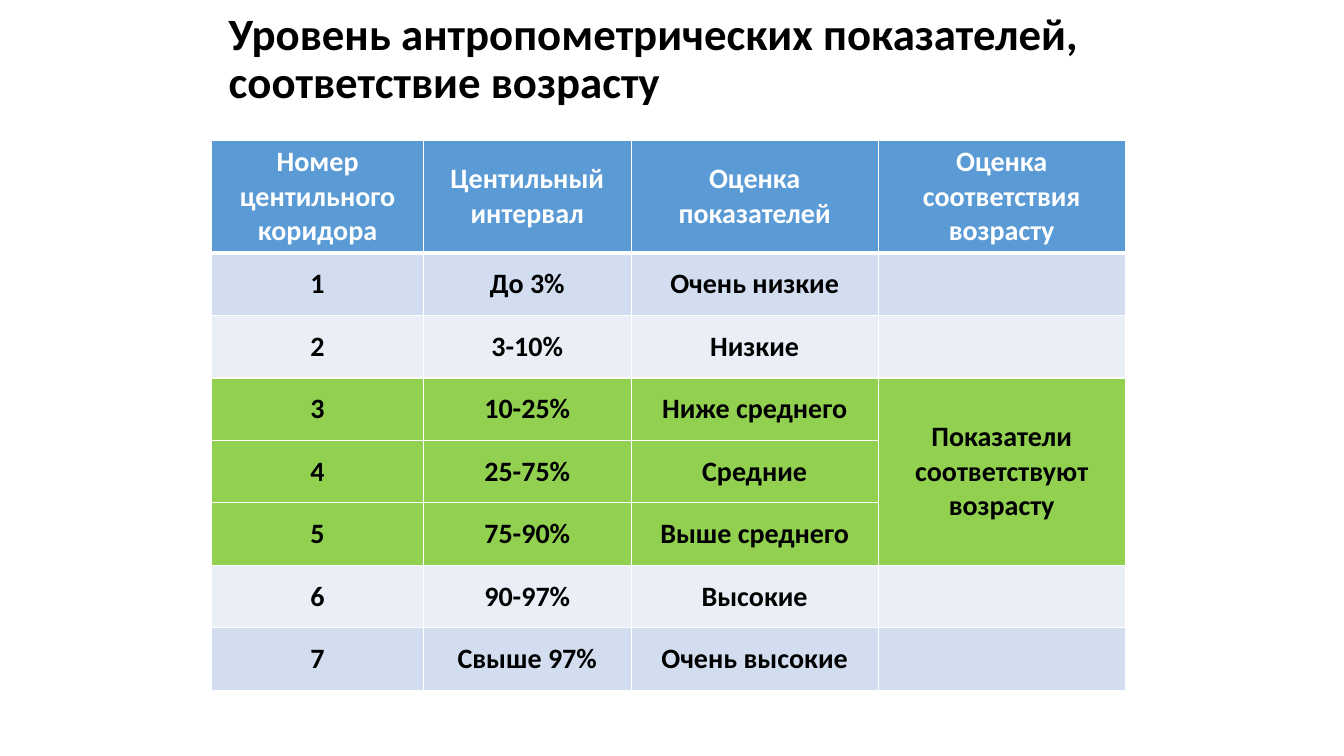
from lxml import etree
from pptx import Presentation
from pptx.dml.color import RGBColor
from pptx.enum import text as t
from pptx.oxml import ns
from pptx.util import Inches, Pt

BLUE, PALE, LIGHT, GREEN = "5B9BD5", "D2DEEF", "EAEFF7", "92D050"
FILLS = [BLUE, PALE, LIGHT, GREEN, GREEN, GREEN, LIGHT, PALE]
WIDTHS = [2.1, 2.06, 2.45, 2.45]
HEAD, ROW = 1.12, 0.62
ROWS = [
    ("Номер центильного коридора", "Центильный интервал",
     "Оценка показателей", "Оценка соответствия возрасту"),
    ("1", "До 3%", "Очень низкие", ""),
    ("2", "3-10%", "Низкие", ""),
    ("3", "10-25%", "Ниже среднего", "Показатели соответствуют возрасту"),
    ("4", "25-75%", "Средние", ""),
    ("5", "75-90%", "Выше среднего", ""),
    ("6", "90-97%", "Высокие", ""),
    ("7", "Свыше 97%", "Очень высокие", ""),
]


def color(code):
    return RGBColor.from_string(code)


def write(frame, words, size=20, ink="000000", align=t.PP_ALIGN.CENTER, space=1.0):
    frame.word_wrap = True
    para = frame.paragraphs[0]
    para.alignment = align
    para.line_spacing = space
    para.font.size = Pt(size)
    if words:
        run = para.add_run()
        run.text = words
        font = run.font
        font.name, font.size, font.bold = "Calibri", Pt(size), True
        font.color.rgb = color(ink)


def border(cell, low):
    props = cell._tc.get_or_add_tcPr()
    for place, (side, width) in enumerate(zip("LRTB", (1, 1, 1, low))):
        line = etree.Element(ns.qn(f"a:ln{side}"), w=str(Pt(width)))
        fill = etree.SubElement(line, ns.qn("a:solidFill"))
        etree.SubElement(fill, ns.qn("a:srgbClr"), val="FFFFFF")
        props.insert(place, line)


def title(slide, words):
    box = slide.shapes.add_textbox(Inches(2.17), Inches(-0.03), Inches(9), Inches(1.25))
    box.text_frame.vertical_anchor = t.MSO_ANCHOR.MIDDLE
    write(box.text_frame, words, size=32, align=t.PP_ALIGN.LEFT, space=0.9)


def grid(slide):
    high = HEAD + ROW * (len(ROWS) - 1)
    table = slide.shapes.add_table(
        len(ROWS), len(WIDTHS), Inches(2.1), Inches(1.39),
        Inches(sum(WIDTHS)), Inches(high)).table
    for col, width in zip(table.columns, WIDTHS):
        col.width = Inches(width)
    for r, (row, fill) in enumerate(zip(ROWS, FILLS)):
        table.rows[r].height = Inches(ROW if r else HEAD)
        for c, words in enumerate(row):
            cell = table.cell(r, c)
            cell.vertical_anchor = t.MSO_ANCHOR.MIDDLE
            cell.fill.solid()
            cell.fill.fore_color.rgb = color(fill)
            border(cell, 1 if r else 3)
            write(cell.text_frame, words, ink="000000" if r else "FFFFFF")
    table.cell(3, 3).merge(table.cell(5, 3))


def main():
    deck = Presentation()
    deck.slide_width, deck.slide_height = Inches(13.33), Inches(7.5)
    slide = deck.slides.add_slide(deck.slide_layouts[6])
    title(slide, "Уровень антропометрических показателей, соответствие возрасту")
    grid(slide)
    deck.save("out.pptx")


if __name__ == "__main__":
    main()
